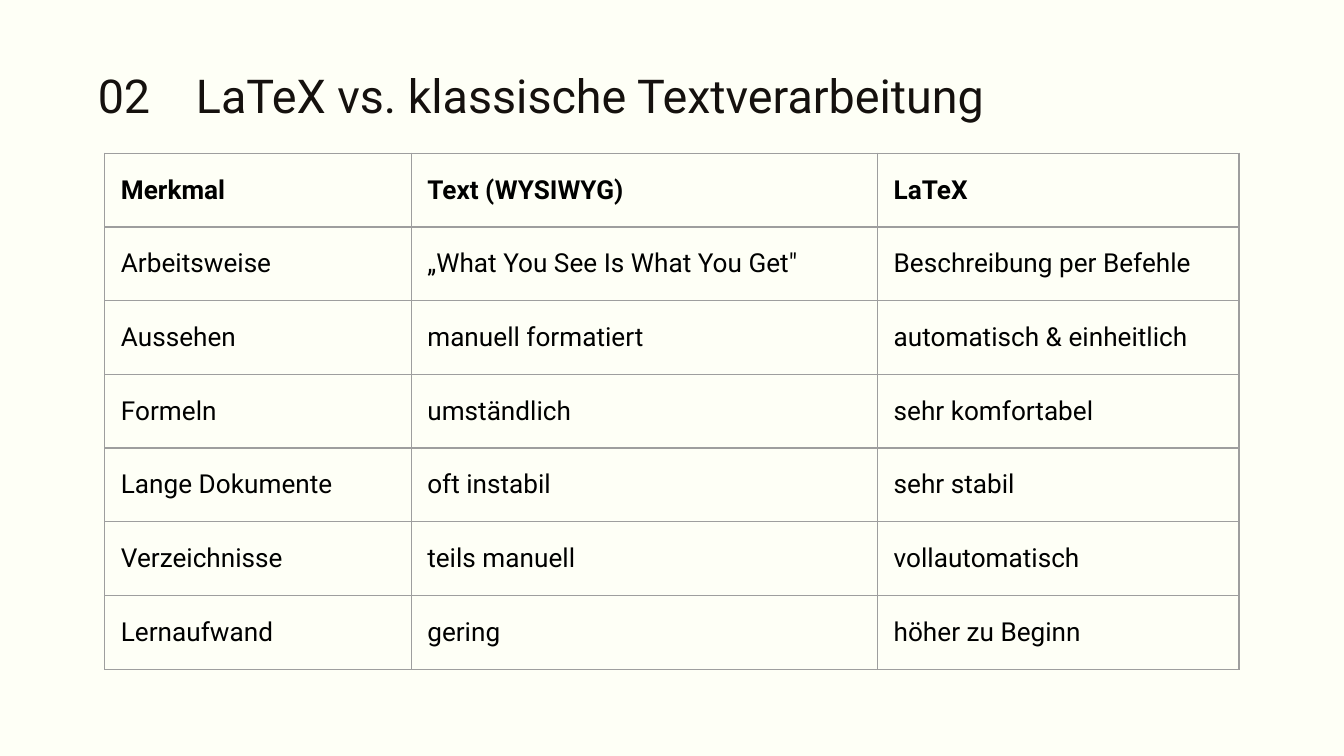
from dataclasses import dataclass

from lxml.etree import SubElement
from pptx import Presentation
from pptx.dml.color import RGBColor
from pptx.enum.text import MSO_ANCHOR
from pptx.oxml.ns import qn
from pptx.util import Inches, Pt

HUES = {"back": "FEFFF6", "head": "15110E", "body": "000000", "rule": "9E9E9E"}
FORMATS = {
    "head": {"name": "Roboto", "size": Pt(25), "bold": False},
    "label": {"name": "Roboto", "size": Pt(14), "bold": True},
    "body": {"name": "Roboto", "size": Pt(14), "bold": False},
}
SIDES = ("left", "right", "top", "bottom")

# A 16:9 slide with a fine square grid, 1000 columns wide
WIDE = Inches(10)
HIGH = WIDE * 9 // 16
UNIT = WIDE // 1000


@dataclass
class Box:
    left: int
    top: int
    width: int
    height: int

    def place(self) -> list[int]:
        return [UNIT * n for n in (self.left, self.top, self.width, self.height)]


@dataclass
class Label:
    text: str
    box: Box


TITLE = Label("LaTeX vs. klassische Textverarbeitung", Box(136, 40, 771, 60))
COUNT = Label("02", Box(63, 40, 73, 60))
SPANS = (228, 347, 269)
GRID = Box(78, 114, sum(SPANS), 384)
CELLS = [
    ("Merkmal", "Text (WYSIWYG)", "LaTeX"),
    ("Arbeitsweise", "„What You See Is What You Get\"", "Beschreibung per Befehle"),
    ("Aussehen", "manuell formatiert", "automatisch & einheitlich"),
    ("Formeln", "umständlich", "sehr komfortabel"),
    ("Lange Dokumente", "oft instabil", "sehr stabil"),
    ("Verzeichnisse", "teils manuell", "vollautomatisch"),
    ("Lernaufwand", "gering", "höher zu Beginn"),
]


def pad(part, size: float) -> None:
    for side in SIDES:
        setattr(part, f"margin_{side}", Inches(size))


def write(frame, text: str, style: str, hue: str) -> None:
    run = frame.paragraphs[0].add_run()
    run.text = text
    for key, value in FORMATS[style].items():
        setattr(run.font, key, value)
    run.font.color.rgb = RGBColor.from_string(HUES[hue])


def draw_head(slide, label: Label) -> None:
    frame = slide.shapes.add_textbox(*label.box.place()).text_frame
    frame.word_wrap = True
    pad(frame, 0.1)
    write(frame, label.text, "head", "head")


def edge(cell) -> None:
    props = cell._tc.get_or_add_tcPr()
    for spot, tag in enumerate(("a:lnL", "a:lnR", "a:lnT", "a:lnB")):
        line = SubElement(props, qn(tag), w=str(Pt(0.75)))
        fill = SubElement(line, qn("a:solidFill"))
        SubElement(fill, qn("a:srgbClr"), val=HUES["rule"])
        props.insert(spot, line)  # borders come before the fill


def draw_grid(slide) -> None:
    shape = slide.shapes.add_table(len(CELLS), len(SPANS), *GRID.place())
    table = shape.table
    table.first_row = table.horz_banding = False
    for col, span in zip(table.columns, SPANS):
        col.width = UNIT * span
    for i, texts in enumerate(CELLS):
        for j, text in enumerate(texts):
            cell = table.cell(i, j)
            cell.fill.background()
            cell.vertical_anchor = MSO_ANCHOR.MIDDLE
            pad(cell, 0.12)
            write(cell.text_frame, text, "body" if i else "label", "body")
            edge(cell)


def main() -> None:
    deck = Presentation()
    deck.slide_width, deck.slide_height = WIDE, HIGH
    slide = deck.slides.add_slide(deck.slide_layouts[6])
    # Background
    fill = slide.background.fill
    fill.solid()
    fill.fore_color.rgb = RGBColor.from_string(HUES["back"])
    # Title, comparison table and chapter number
    draw_head(slide, TITLE)
    draw_grid(slide)
    draw_head(slide, COUNT)
    deck.save("out.pptx")


if __name__ == "__main__":
    main()
